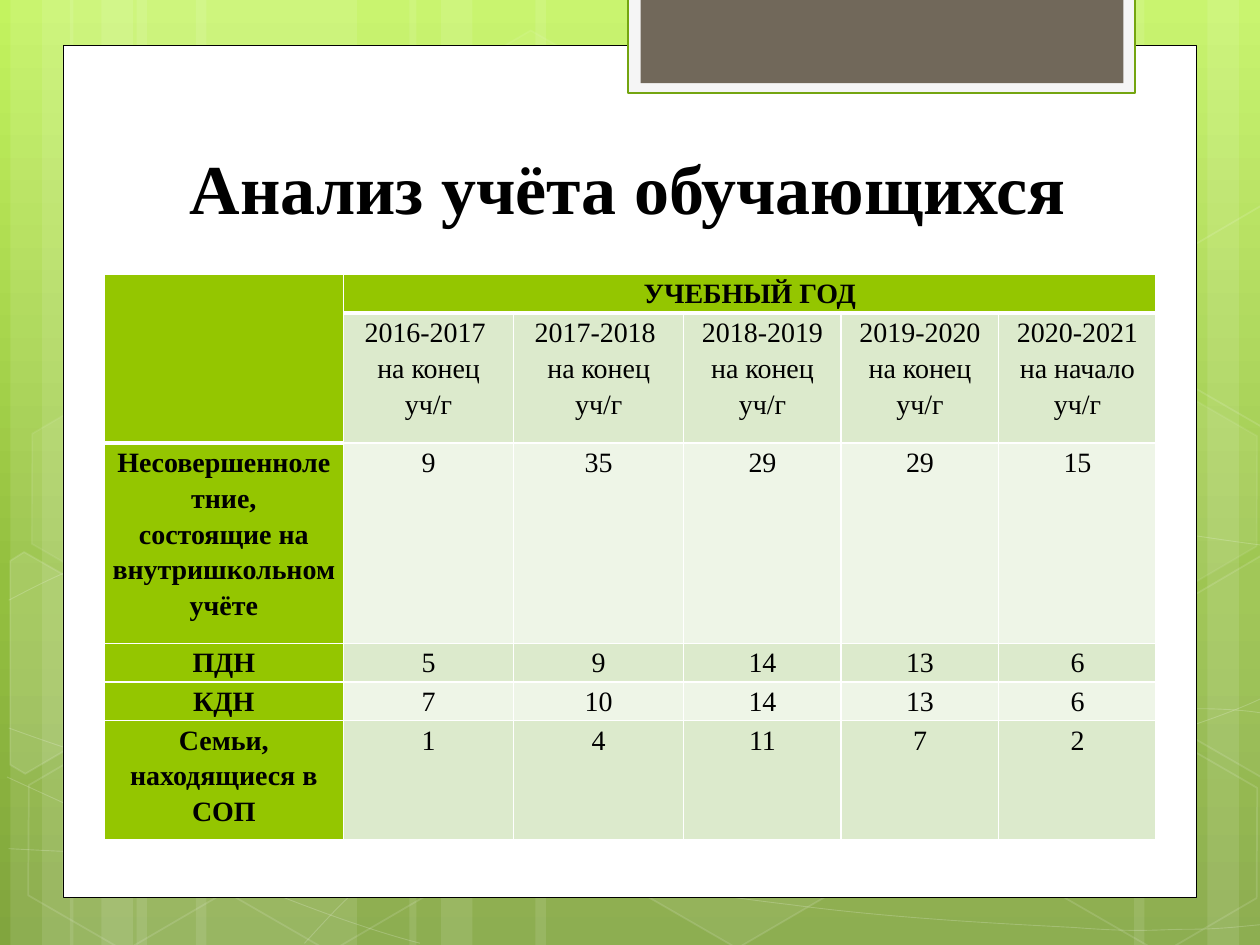
"""Build a slide with a table of pupils on record by school year."""
import math
from copy import deepcopy

from lxml import etree
from pptx import Presentation, util as u
from pptx.dml import color as c
from pptx.enum import shapes, text
from pptx.oxml import ns

Pt = u.Pt
WHITE = c.RGBColor(255, 255, 255)
BLACK = c.RGBColor(0, 0, 0)
GREEN = c.RGBColor(0x94, 0xC6, 0x00)
EDGE = c.RGBColor(0x74, 0xA5, 0x10)
PALE = c.RGBColor(0xEE, 0xF5, 0xE7)
TINT = c.RGBColor(0xDC, 0xEA, 0xCC)
SMOKE = c.RGBColor(0xF5, 0xF5, 0xF5)
BROWN = c.RGBColor(0x71, 0x68, 0x5A)
SKY = [(0, c.RGBColor(0xC3, 0xF3, 0x5F)), (0.62, c.RGBColor(0x93, 0xBF, 0x3F)),
       (1, c.RGBColor(0x81, 0xA5, 0x3E))]

TITLE = "Анализ учёта обучающихся"
ROWS = [
    ["", "УЧЕБНЫЙ ГОД", "", "", "", ""],
    ["", "2016-2017 \nна конец уч/г", "2017-2018 \nна конец уч/г",
     "2018-2019\nна конец уч/г", "2019-2020\nна конец уч/г", "2020-2021\nна начало уч/г"],
    ["Несовершеннолетние,\nсостоящие на внутришкольном учёте", "9", "35", "29", "29", "15"],
    ["ПДН", "5", "9", "14", "13", "6"],
    ["КДН", "7", "10", "14", "13", "6"],
    ["Семьи, находящиеся в СОП", "1", "4", "11", "7", "2"],
]
WIDE = [136.8, 97.2, 97.2, 90, 90, 90]
HIGH = [22.3, 74.2, 114.5, 22.1, 22.1, 68.2]

BANDS = [(78, 126), (6, 36), (24, 60), (112, 126), (40, 36), (58, 60), (528, 126),
         (690, 36), (648, 60), (306, 222), (234, 36), (252, 60)]
CURVES = [
    [(5, 485), (44, 487), (83, 489), (137, 488), (191, 487), (258, 486), (330, 479),
     (402, 472), (504, 458), (570, 444), (636, 431), (703, 409), (725, 397)],
    [(5, 343), (26, 332), (47, 321), (87, 310), (128, 300), (186, 284), (250, 279),
     (314, 274), (392, 273), (471, 279), (550, 284), (682, 307), (725, 312)],
    [(4, 444), (91, 484), (178, 523), (240, 539)],
    [(5, 416), (27, 424), (50, 432), (92, 444), (134, 454), (197, 472), (257, 485),
     (317, 497), (392, 510), (452, 517), (512, 525), (576, 528), (614, 530),
     (652, 533), (662, 531), (680, 531), (699, 531), (712, 529), (725, 528)],
    [(174, 539), (187, 525), (200, 510), (217, 498), (235, 485), (259, 470), (279, 460),
     (300, 450), (312, 446), (338, 438), (364, 431), (413, 421), (438, 416),
     (464, 411), (467, 411), (490, 410), (512, 407), (547, 405), (572, 405),
     (597, 404), (638, 405), (638, 405), (654, 405), (670, 405), (686, 405),
     (699, 405), (711, 406), (718, 407), (724, 408), (722, 407), (724, 408)],
]
HEXES = [(240.5, 26, 4, 8), (358, 424, 6, 12), (8, 425.5, 0, 12), (10, 224.6, 7, 8),
         (125.3, 426, 0, 12), (542, 326, 10, 12), (600.5, 427, 0, 12), (600.5, 226, 7, 8)]
CUTS = [
    ((25.9, 385.2), 10, [(5.8, 320.4), (13.7, 315.4), (69.1, 347), (68.4, 410.4),
                         (14.4, 442.1), (5.8, 437)]),
    ((709.2, 374.4), 4, [(666.7, 349.2), (720.7, 317.5), (726.5, 321.1), (726.5, 441.4),
                         (721.4, 444.2), (666.7, 412.6)]),
    ((709.2, 173.5), 0, [(666.7, 149), (720.7, 117.4), (727.2, 121), (726.5, 241.2),
                         (721.4, 244.1), (666.7, 212.4)]),
]
CARDS = [((36, 26, 648, 487), WHITE, BLACK, 0.5),
         ((359, -1.5, 289.8, 54.7), SMOKE, EDGE, 1.25),
         ((366.1, -1.5, 275.9, 49), BROWN, None, 0)]


def put(obj, **form):
    for key, val in form.items():
        setattr(obj, key, val)


def fade(fill, share):
    hue = fill._xPr.find(".//" + ns.qn("a:srgbClr"))
    etree.SubElement(hue, ns.qn("a:alpha"), val=str(share * 1000))


def paint(shape, fill=None, clear=100, line=None, width=1, dim=100):
    shape.shadow.inherit = False
    if fill is None or not clear:
        shape.fill.background()
    else:
        shape.fill.solid()
        shape.fill.fore_color.rgb = fill
        if clear < 100:
            fade(shape.fill, clear)
    if line is None:
        shape.line.fill.background()
    else:
        shape.line.color.rgb = line
        shape.line.width = Pt(width)
        if dim < 100:
            fade(shape.line.fill, dim)


def trace(tree, dots, close):
    pen = tree.build_freeform(*dots[0], scale=Pt(1) / 100)
    pen.add_line_segments(dots[1:], close=close)
    return pen.convert_to_shape()


def scale(dots):
    return [(round(x * 100), round(y * 100)) for x, y in dots]


def bend(shape):
    legs = list(shape._element.iter(ns.qn("a:lnTo")))
    for i in range(0, len(legs), 3):
        arc = etree.Element(ns.qn("a:cubicBezTo"))
        legs[i].addprevious(arc)
        for leg in legs[i:i + 3]:
            arc.append(leg[0])
            leg.getparent().remove(leg)


def turn(dots, mid, angle):
    cos, sin = math.cos(math.radians(angle)), math.sin(math.radians(angle))
    return [(mid[0] + (x - mid[0]) * cos - (y - mid[1]) * sin,
             mid[1] + (x - mid[0]) * sin + (y - mid[1]) * cos) for x, y in dots]


def box(tree, kind, *rect):
    return tree.add_shape(kind, *map(Pt, rect))


def write(frame, words, **form):
    frame.text = words
    for para in frame.paragraphs:
        para.alignment = text.PP_ALIGN.CENTER
        for run in para.runs:
            put(run.font, name="Times New Roman", **form)
            run.font.color.rgb = BLACK


def rule(cell, sides):
    prop = cell._tc.get_or_add_tcPr()
    for spot, (side, width) in enumerate(sides.items()):
        line = etree.Element(ns.qn("a:ln" + side), w=str(Pt(width)))
        fill = etree.SubElement(line, ns.qn("a:solidFill"))
        etree.SubElement(fill, ns.qn("a:srgbClr"), val=str(WHITE))
        prop.insert(spot, line)


def sky(slide):
    fill = slide.background.fill
    fill.gradient()
    fill.gradient_angle = 270
    stops = slide._element.find(".//" + ns.qn("a:gsLst"))
    stops.append(deepcopy(stops[-1]))
    for stop, (place, hue) in zip(fill.gradient_stops, SKY):
        stop.position = place
        stop.color.rgb = hue


def decor(tree):
    kind = shapes.MSO_SHAPE
    for left, wide in BANDS:
        paint(box(tree, kind.RECTANGLE, left, 0, wide, 540), WHITE, 10)
    for knots in CURVES:
        curve = trace(tree, scale(knots), False)
        bend(curve)
        paint(curve, line=WHITE, width=0.5, dim=20)
    for left, top, clear, dim in HEXES:
        hexa = box(tree, kind.HEXAGON, left, top, 126, 109.4)
        hexa.rotation = 30
        hexa.adjustments[0] = 0.285
        paint(hexa, WHITE, clear, WHITE, 1, dim)
    for mid, clear, dots in CUTS:
        cut = trace(tree, scale(turn(dots, mid, -30)), True)
        cut.rotation = 30
        paint(cut, WHITE, clear, WHITE, 1, 12)
    for rect, fill, line, width in CARDS:
        paint(box(tree, kind.RECTANGLE, *rect), fill, line=line, width=width)


def chart(tree):
    grid = tree.add_table(len(ROWS), len(WIDE), Pt(59.5), Pt(156.6),
                          Pt(sum(WIDE)), Pt(sum(HIGH))).table
    for col, wide in zip(grid.columns, WIDE):
        col.width = Pt(wide)
    for row, high in zip(grid.rows, HIGH):
        row.height = Pt(high)
    for r, row in enumerate(ROWS):
        for k, words in enumerate(row):
            cell = grid.cell(r, k)
            head = r == 0 or k == 0
            put(cell, margin_left=Pt(4.1), margin_right=Pt(4.1), margin_top=0, margin_bottom=0)
            write(cell.text_frame, words, size=Pt(16), bold=head)
            for para in cell.text_frame.paragraphs:
                para.line_spacing = 1.15
            cell.fill.solid()
            cell.fill.fore_color.rgb = GREEN if head else TINT if r % 2 else PALE
            seam = 1 if k == 0 else 0
            rule(cell, {"L": 1, "R": 1, "T": 3 if r == seam + 1 else 1,
                        "B": 3 if r == seam else 1})
    grid.cell(0, 0).merge(grid.cell(1, 0))
    grid.cell(0, 1).merge(grid.cell(0, 5))


def main():
    deck = Presentation()
    put(deck, slide_width=Pt(720), slide_height=Pt(540))
    slide = deck.slides.add_slide(deck.slide_layouts[5])
    tree = slide.shapes
    sky(slide)
    decor(tree)
    title = tree.title
    put(title, left=Pt(82.3), top=Pt(81), width=Pt(553), height=Pt(53.3))
    write(title.text_frame, TITLE, size=Pt(40), bold=True)
    put(title.text_frame, vertical_anchor=text.MSO_ANCHOR.BOTTOM, word_wrap=True)
    tree._spTree.append(title._element)
    chart(tree)
    deck.save("out.pptx")


if __name__ == "__main__":
    main()
